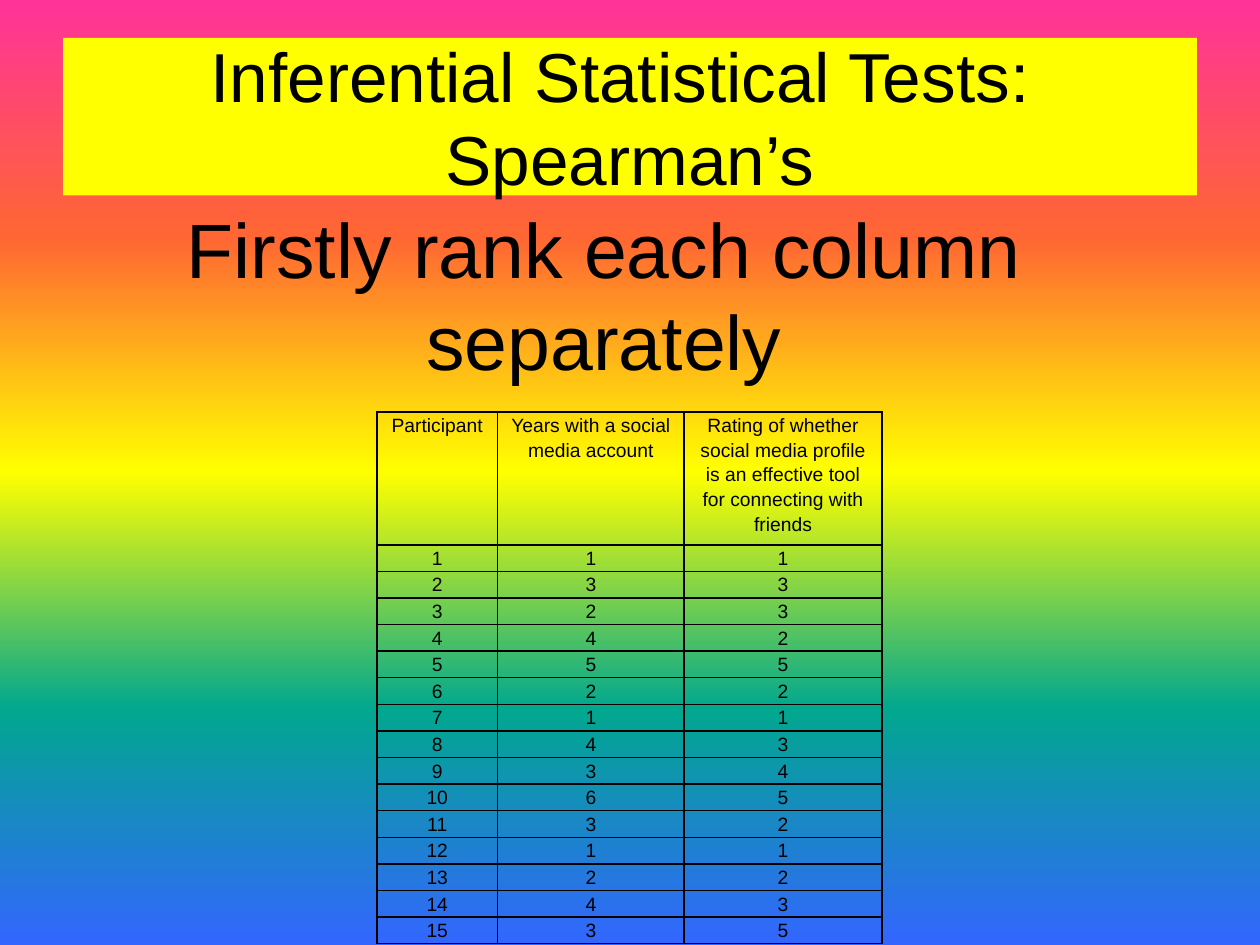
from pptx import Presentation
from pptx import util as u
from pptx.dml.color import RGBColor
from pptx.enum import text
from pptx.oxml import parse_xml
from pptx.oxml.ns import nsdecls

# Content
TITLE = "Inferential Statistical Tests: \vSpearman’s"
INSTRUCTION = "Firstly rank each column separately"
HEADINGS = (
    "Participant",
    "Years with a social media account",
    "Rating of whether social media profile is an effective tool "
    "for connecting with friends",
)
YEARS = (1, 3, 2, 4, 5, 2, 1, 4, 3, 6, 3, 1, 2, 4, 3)
RATINGS = (1, 3, 3, 2, 5, 2, 1, 3, 4, 5, 2, 1, 2, 3, 5)

# Style
BLACK = RGBColor(0x00, 0x00, 0x00)
YELLOW = RGBColor(0xFF, 0xFF, 0x00)
RAINBOW = (
    RGBColor(0xFF, 0x33, 0x99),
    RGBColor(0xFF, 0x66, 0x33),
    YELLOW,
    RGBColor(0x01, 0xA7, 0x8F),
    RGBColor(0x33, 0x66, 0xFF),
)
COLUMN_WIDTHS = (0.96, 1.48, 1.57)
HEADER_HEIGHT, ROW_HEIGHT = 1.05, 0.21


def write(frame, content, size, spacing=None):
    paragraph = frame.paragraphs[0]
    paragraph.text = content
    paragraph.alignment = text.PP_ALIGN.CENTER
    if spacing:
        paragraph.line_spacing = spacing
    for run in paragraph.runs:
        run.font.name = "Arial"
        run.font.size = u.Pt(size)
        run.font.color.rgb = BLACK


def paint_background(slide, colours):
    fill = slide.background.fill
    fill.gradient()
    fill.gradient_angle = 270
    stops = slide.element.xpath(".//p:bg//a:gsLst")[0]
    for stop in list(stops):
        stops.remove(stop)
    for i, colour in enumerate(colours):
        position = i * 100000 // (len(colours) - 1)
        stops.append(parse_xml(
            f'<a:gs {nsdecls("a")} pos="{position}"><a:srgbClr val="{colour}"/></a:gs>'))


def draw_borders(cell):
    properties = cell._tc.get_or_add_tcPr()
    for i, side in enumerate(("lnL", "lnR", "lnT", "lnB")):
        properties.insert(i, parse_xml(
            f'<a:{side} {nsdecls("a")} w="{u.Pt(1)}"><a:solidFill>'
            f'<a:srgbClr val="{BLACK}"/></a:solidFill></a:{side}>'))


def add_scores(slide):
    rows = [HEADINGS, *zip(range(1, len(YEARS) + 1), YEARS, RATINGS)]
    heights = [HEADER_HEIGHT] + [ROW_HEIGHT] * len(YEARS)
    scores = slide.shapes.add_table(
        len(rows), len(HEADINGS), u.Inches(2.99), u.Inches(3.27),
        u.Inches(sum(COLUMN_WIDTHS)), u.Inches(sum(heights))).table
    scores.first_row = scores.horz_banding = False
    for column, width in zip(scores.columns, COLUMN_WIDTHS):
        column.width = u.Inches(width)
    for r, (values, height) in enumerate(zip(rows, heights)):
        scores.rows[r].height = u.Inches(height)
        for c, value in enumerate(values):
            cell = scores.cell(r, c)
            cell.margin_left = cell.margin_right = u.Inches(0.07)
            cell.margin_top = cell.margin_bottom = 0
            cell.fill.background()
            draw_borders(cell)
            write(cell.text_frame, str(value), size=11, spacing=1.15)


def main():
    deck = Presentation()
    deck.slide_width, deck.slide_height = u.Inches(10), u.Inches(7.5)
    slide = deck.slides.add_slide(deck.slide_layouts[5])
    paint_background(slide, RAINBOW)

    # Title band
    title = slide.shapes.title
    title.left, title.top = u.Inches(0.5), u.Inches(0.3)
    title.width, title.height = u.Inches(9), u.Inches(1.25)
    title.fill.solid()
    title.fill.fore_color.rgb = YELLOW
    title.text_frame.auto_size = text.MSO_AUTO_SIZE.NONE
    title.text_frame.vertical_anchor = text.MSO_ANCHOR.MIDDLE
    write(title.text_frame, TITLE, size=39.6)

    # Instruction
    instruction = slide.shapes.add_textbox(
        u.Inches(0), u.Inches(1.55), u.Inches(9.59), u.Inches(1.58))
    instruction.text_frame.word_wrap = True
    instruction.text_frame.auto_size = text.MSO_AUTO_SIZE.SHAPE_TO_FIT_TEXT
    write(instruction.text_frame, INSTRUCTION, size=44)

    # Table of scores
    add_scores(slide)
    deck.save("out.pptx")


if __name__ == "__main__":
    main()
